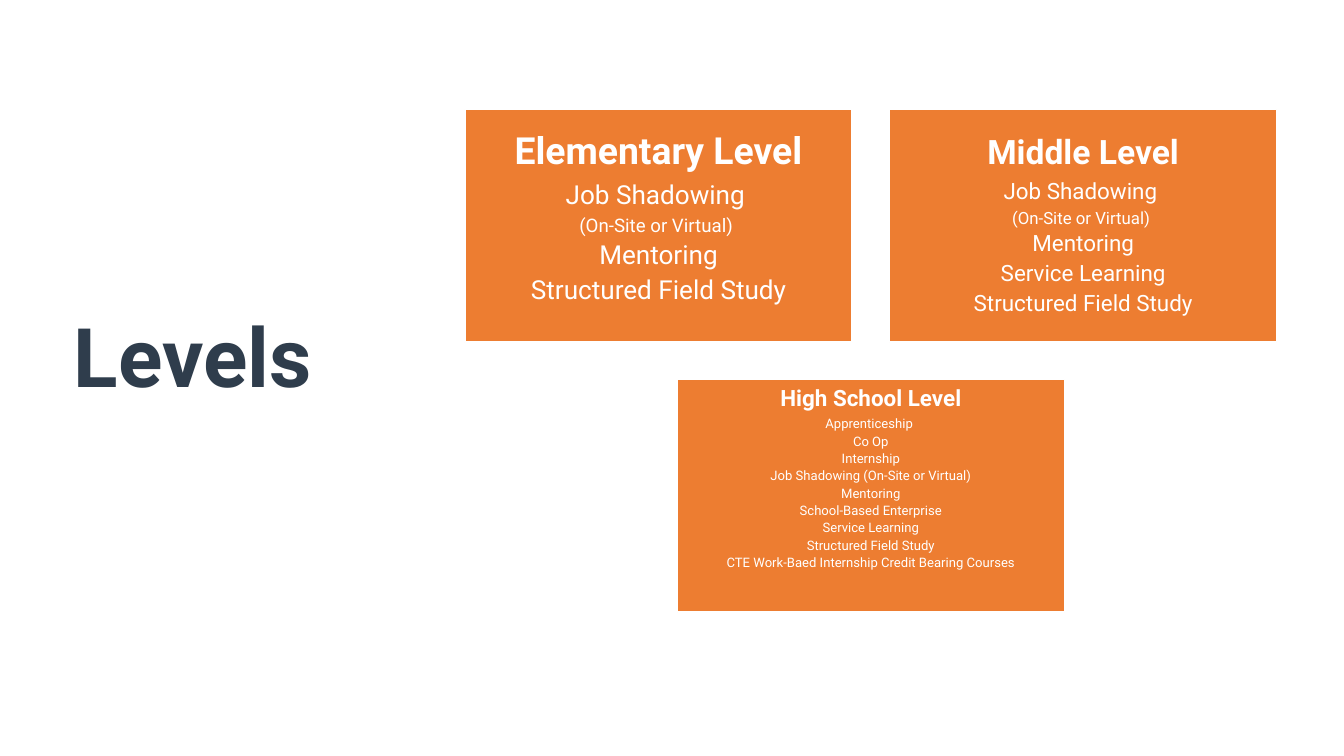
from pptx import Presentation
from pptx.dml.color import RGBColor
from pptx.enum.shapes import MSO_SHAPE as Shape
from pptx.enum.text import MSO_ANCHOR as Anchor, MSO_AUTO_SIZE as AutoSize, PP_ALIGN as Align
from pptx.util import Pt

ORANGE, NAVY, WHITE = "ED7D31", "2F3D4C", "FFFFFF"
CARD_WIDTH, CARD_HEIGHT, GAP = 414.7, 249.1, 40.3
LEFT, TOP = 498.2, 117.4

ELEMENTARY = [("Elementary Level", 40), ("Job Shadowing ", 28), ("(On-Site or Virtual) ", 20),
              ("Mentoring", 28), ("Structured Field Study", 28)]
MIDDLE = [("Middle Level", 36), ("Job Shadowing ", 24), ("(On-Site or Virtual) ", 18),
          ("Mentoring", 24), ("Service Learning", 24), ("Structured Field Study", 24)]
HIGH_SCHOOL = [("High School Level", 24)] + [(activity, 14) for activity in (
    "Apprenticeship ", "Co Op", "Internship", "Job Shadowing (On-Site or Virtual)",
    "Mentoring", "School-Based Enterprise", "Service Learning", "Structured Field Study",
    "CTE Work-Baed Internship Credit Bearing Courses")]


def color(code):
    """Turn a hex string into a colour."""
    return RGBColor.from_string(code)


def add_run(paragraph, text, size, code, bold=False):
    """Add one formatted run to a paragraph."""
    run = paragraph.add_run()
    run.text = text
    font = run.font
    font.name, font.size, font.bold = "Roboto", Pt(size), bold
    font.color.rgb = color(code)


def place_title(slide, left, top, width, height):
    """Move and format the title placeholder."""
    title = slide.shapes.title
    title.left, title.top, title.width, title.height = map(Pt, (left, top, width, height))
    frame = title.text_frame
    frame.auto_size = AutoSize.NONE
    frame.vertical_anchor = Anchor.MIDDLE
    heading = frame.paragraphs[0]
    heading.alignment = Align.LEFT
    add_run(heading, "Levels", 88, NAVY, bold=True)


def add_level_card(slide, left, top, width, height, lines, inset):
    """Draw one level card whose first line is its bold heading."""
    card = slide.shapes.add_shape(Shape.RECTANGLE, *map(Pt, (left, top, width, height)))
    card.shadow.inherit = False
    card.fill.solid()
    card.fill.fore_color.rgb = color(ORANGE)
    card.line.color.rgb = color(WHITE)
    card.line.width = Pt(1.5)
    frame = card.text_frame
    frame.word_wrap = True
    frame.vertical_anchor = Anchor.TOP
    frame.margin_top = Pt(inset)
    frame.margin_bottom = Pt(0)
    for index, (text, size) in enumerate(lines):
        paragraph = frame.add_paragraph() if index else frame.paragraphs[0]
        paragraph.alignment = Align.CENTER
        paragraph.line_spacing = 0.9
        paragraph.space_after = Pt(size * 0.25)
        add_run(paragraph, text, size, WHITE, bold=index == 0)


def main():
    """Build the slide and save it."""
    deck = Presentation()
    deck.slide_width, deck.slide_height = Pt(1440), Pt(810)
    slide = deck.slides.add_slide(deck.slide_layouts[5])
    place_title(slide, 72, 99.4, 365.8, 561.6)
    cards = [(0, 0, ELEMENTARY, 24.5), (1, 0, MIDDLE, 28), (0.5, 1, HIGH_SCHOOL, 8.5)]
    for column, row, lines, inset in cards:
        add_level_card(slide, LEFT + column * (CARD_WIDTH + GAP), TOP + row * (CARD_HEIGHT + GAP),
                       CARD_WIDTH, CARD_HEIGHT, lines, inset)
    deck.save("out.pptx")


if __name__ == "__main__":
    main()
